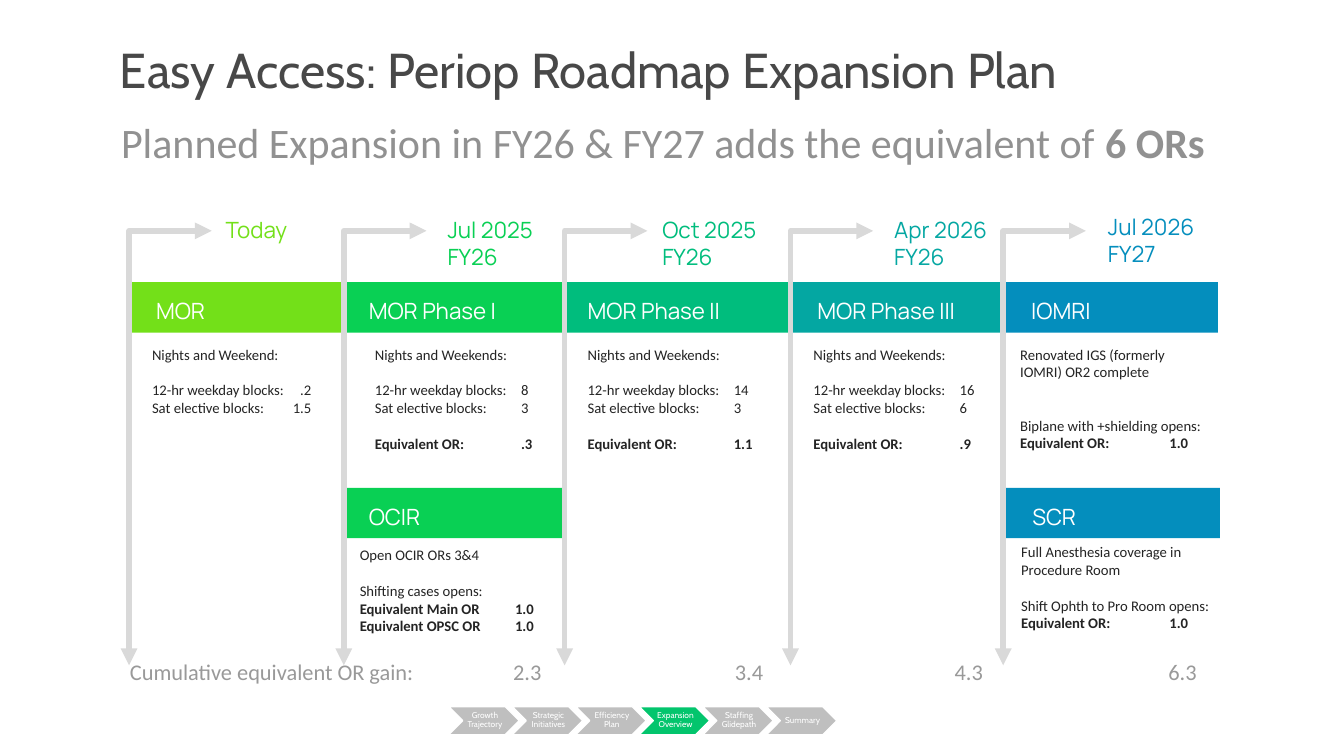
from dataclasses import dataclass

from lxml import etree
from pptx import Presentation
from pptx.dml.color import RGBColor
from pptx.enum.shapes import MSO_SHAPE
from pptx.enum.text import MSO_ANCHOR, MSO_AUTO_SIZE, PP_ALIGN
from pptx.oxml.ns import qn
from pptx.shapes.autoshape import Shape
from pptx.slide import Slide
from pptx.text.text import TextFrame
from pptx.util import Inches, Pt

RECTANGLE, CHEVRON = MSO_SHAPE.RECTANGLE, MSO_SHAPE.CHEVRON
TOP, MIDDLE = MSO_ANCHOR.TOP, MSO_ANCHOR.MIDDLE
LEFT, CENTER = PP_ALIGN.LEFT, PP_ALIGN.CENTER
NO_AUTOFIT = MSO_AUTO_SIZE.NONE


@dataclass(frozen=True)
class Theme:
    title: str = "484848"
    subtitle: str = "919191"
    total: str = "999999"
    detail: str = "242424"
    white: str = "FFFFFF"
    arrow: str = "D9D9D9"
    step: str = "BFBFBF"
    current_step: str = "03C56D"
    lime: str = "73E019"
    green: str = "09D054"
    jade: str = "00BD7D"
    teal: str = "04A7A2"
    blue: str = "048EBD"
    title_font: str = "Cabin"
    heading_font: str = "Manrope"
    body_font: str = "Calibri"
    title_size: float = 35
    subtitle_size: float = 30
    heading_size: float = 16
    detail_size: float = 10.5
    step_size: float = 6


THEME = Theme()
BLANK_LINE = 12.8
BAND_HEIGHT = 0.5
ARROW_TOP, ARROW_BOTTOM, ARROW_REACH = 2.29, 6.6, 0.82


@dataclass(frozen=True)
class Line:
    text: str
    value: str = ""
    bold: bool = False
    gap: float = 0
    bold_tail: str = ""


@dataclass(frozen=True)
class Band:
    name: str
    left: float
    top: float
    width: float
    name_left: float
    color: str


@dataclass(frozen=True)
class Milestone:
    arrow_left: float
    date_left: float
    date_top: float
    date: tuple[str, ...]
    color: str


@dataclass(frozen=True)
class Detail:
    left: float
    top: float
    width: float
    height: float
    tab: float
    lines: tuple[Line, ...]
    tab_align: str = "l"


def blocks(left: float, weekday: str, saturday: str, equivalent: str) -> Detail:
    """Night and weekend blocks gained in one MOR phase."""
    return Detail(left, 3.38, 1.87, 1.34, 1.45, (
        Line("Nights and Weekends:"),
        Line("12-hr weekday blocks:", weekday, gap=BLANK_LINE),
        Line("Sat elective blocks:", saturday),
        Line("Equivalent OR:", equivalent, bold=True, gap=BLANK_LINE),
    ))


BANDS = (
    Band("MOR", 1.28, 2.8, 2.12, 1.45, THEME.lime),
    Band("MOR Phase I", 3.4, 2.8, 2.19, 3.56, THEME.green),
    Band("MOR Phase II", 5.59, 2.8, 2.25, 5.73, THEME.jade),
    Band("MOR Phase III", 7.84, 2.8, 2.12, 8.01, THEME.teal),
    Band("IOMRI", 9.96, 2.8, 2.12, 10.13, THEME.blue),
    Band("OCIR", 3.41, 4.84, 2.19, 3.56, THEME.green),
    Band("SCR", 9.98, 4.84, 2.12, 10.14, THEME.blue),
)
MILESTONES = (
    Milestone(1.28, 2.14, 2.1, ("Today",), THEME.lime),
    Milestone(3.41, 4.34, 2.1, ("Jul 2025", "FY26"), THEME.green),
    Milestone(5.6, 6.47, 2.1, ("Oct 2025", "FY26"), THEME.jade),
    Milestone(7.84, 8.77, 2.1, ("Apr 2026", "FY26"), THEME.teal),
    Milestone(9.95, 10.89, 2.07, ("Jul 2026", "FY27"), THEME.blue),
)
DETAILS = (
    Detail(1.41, 3.38, 1.87, 1.51, 1.58, (
        Line("Nights and Weekend:"),
        Line("12-hr weekday blocks:", ".2", gap=BLANK_LINE),
        Line("Sat elective blocks:", "1.5"),
    ), "r"),
    blocks(3.62, "8", "3", ".3"),
    blocks(5.73, "14", "3", "1.1"),
    blocks(7.97, "16", "6", ".9"),
    Detail(10.02, 3.38, 2.03, 1.16, 1.48, (
        Line("Renovated IGS (formerly IOMRI) OR2 complete"),
        Line("Biplane with +shielding opens:", gap=2 * BLANK_LINE),
        Line("Equivalent OR:", "1.0", bold=True),
    )),
    Detail(3.47, 5.37, 1.96, 1.16, 1.54, (
        Line("Open OCIR ORs 3&4"),
        Line("Shifting cases opens:", gap=BLANK_LINE),
        Line("Equivalent Main OR", "1.0", bold=True),
        Line("Equivalent OPSC OR", "1.0", bold=True),
    )),
    Detail(10.03, 5.34, 2.12, 0.98, 1.47, (
        Line("Full Anesthesia coverage in Procedure Room"),
        Line("Shift Ophth to Pro Room opens:", gap=BLANK_LINE),
        Line("Equivalent OR:", "1.0", bold=True),
    )),
)
TOTALS = ("2.3", "3.4", "4.3", "6.3")
TOTAL_TABS = (3.8, 6.0, 8.18, 10.3)
STEPS = ("Growth Trajectory", "Strategic Initiatives", "Efficiency Plan",
         "Expansion Overview", "Staffing Glidepath", "Summary")
CURRENT_STEP = "Expansion Overview"


def write(frame: TextFrame, lines: tuple[Line, ...], *, size: float, font: str, color: str,
          align: PP_ALIGN = LEFT, anchor: MSO_ANCHOR = TOP, spacing: float = 1.0,
          insets: tuple[float, ...] = (0.1, 0.05, 0.1, 0.05),
          tabs: tuple[float, ...] = (), tab_align: str = "l") -> None:
    frame.word_wrap = True
    frame.auto_size = NO_AUTOFIT
    frame.vertical_anchor = anchor
    (frame.margin_left, frame.margin_top,
     frame.margin_right, frame.margin_bottom) = map(Inches, insets)
    for index, line in enumerate(lines):
        paragraph = frame.add_paragraph() if index else frame.paragraphs[0]
        if tabs:
            stops = etree.SubElement(paragraph._p.get_or_add_pPr(), qn("a:tabLst"))
            for tab in tabs:
                etree.SubElement(stops, qn("a:tab"), pos=str(Inches(tab)), algn=tab_align)
        paragraph.alignment = align
        paragraph.line_spacing = spacing
        paragraph.space_before = Pt(line.gap)
        text = f"{line.text}\t{line.value}" if line.value else line.text
        for part, bold in ((text, line.bold), (line.bold_tail, True)):
            if part:
                run = paragraph.add_run()
                run.text = part
                run.font.size, run.font.name, run.font.bold = Pt(size), font, bold
                run.font.color.rgb = RGBColor.from_string(color)


def add_frame(slide: Slide, left: float, top: float, width: float, height: float) -> TextFrame:
    return slide.shapes.add_textbox(*map(Inches, (left, top, width, height))).text_frame


def add_filled(slide: Slide, kind: MSO_SHAPE, left: float, top: float, width: float,
               height: float, color: str) -> Shape:
    shape = slide.shapes.add_shape(kind, *map(Inches, (left, top, width, height)))
    shape.shadow.inherit = False
    shape.fill.solid()
    shape.fill.fore_color.rgb = RGBColor.from_string(color)
    shape.line.fill.background()
    return shape


def add_arrow(slide: Slide, left: float) -> None:
    """Bent arrow pointing down to the totals and right to the date."""
    builder = slide.shapes.build_freeform(Inches(left), Inches(ARROW_BOTTOM))
    corner_and_end = ((left, ARROW_TOP), (left + ARROW_REACH, ARROW_TOP))
    builder.add_line_segments([(Inches(x), Inches(y)) for x, y in corner_and_end], close=False)
    arrow = builder.convert_to_shape()
    arrow.shadow.inherit = False
    arrow.fill.background()
    arrow.line.width = Pt(4)
    arrow.line.color.rgb = RGBColor.from_string(THEME.arrow)
    for end in ("a:headEnd", "a:tailEnd"):
        etree.SubElement(arrow.line._get_or_add_ln(), qn(end), type="triangle")


def add_steps(slide: Slide) -> None:
    for index, step in enumerate(STEPS):
        color = THEME.current_step if step == CURRENT_STEP else THEME.step
        chevron = add_filled(slide, CHEVRON, 4.45 + 0.63 * index, 7.01, 0.7, 0.28, color)
        chevron.line.color.rgb = RGBColor.from_string(THEME.white)
        chevron.line.width = Pt(1)
        write(chevron.text_frame, (Line(step),), size=THEME.step_size, font=THEME.title_font,
              color=THEME.white, align=CENTER, anchor=MIDDLE, spacing=0.9,
              insets=(0.03, 0.01, 0.01, 0.01))


def add_titles(slide: Slide) -> None:
    title, subtitle = slide.placeholders
    title.left, title.top, title.width, title.height = map(Inches, (1.09, 0.41, 11.23, 1.27))
    write(title.text_frame, (Line("Easy Access: Periop Roadmap Expansion Plan"),),
          size=THEME.title_size, font=THEME.title_font, color=THEME.title, spacing=0.9)
    subtitle.left, subtitle.top, subtitle.width, subtitle.height = map(
        Inches, (0.75, 0.83, 11.65, 1.25))
    planned = Line("Planned Expansion in FY26 & FY27 adds the equivalent of ", bold_tail="6 ORs")
    write(subtitle.text_frame, (planned,), size=THEME.subtitle_size, font=THEME.body_font,
          color=THEME.subtitle, align=CENTER, anchor=MIDDLE, spacing=0.8, insets=(0, 0, 0, 0))


def main() -> None:
    deck = Presentation()
    deck.slide_width, deck.slide_height = Inches(13.33), Inches(7.5)
    slide = deck.slides.add_slide(deck.slide_layouts[0])
    add_titles(slide)
    for band in BANDS:
        add_filled(slide, RECTANGLE, band.left, band.top, band.width, BAND_HEIGHT, band.color)
    for milestone in MILESTONES:
        add_arrow(slide, milestone.arrow_left)
        write(add_frame(slide, milestone.date_left, milestone.date_top, 1.25, 0.64),
              tuple(map(Line, milestone.date)), size=THEME.heading_size,
              font=THEME.heading_font, color=milestone.color)
    for band in BANDS:
        write(add_frame(slide, band.name_left, band.top + 0.1, 1.87, 0.37), (Line(band.name),),
              size=THEME.heading_size, font=THEME.heading_font, color=THEME.white)
    for detail in DETAILS:
        write(add_frame(slide, detail.left, detail.top, detail.width, detail.height),
              detail.lines, size=THEME.detail_size, font=THEME.body_font, color=THEME.detail,
              tabs=(detail.tab,), tab_align=detail.tab_align)
    write(add_frame(slide, 1.19, 6.48, 11.65, 0.37),
          (Line("Cumulative equivalent OR gain:", "\t".join(TOTALS)),),
          size=THEME.heading_size, font=THEME.body_font, color=THEME.total, tabs=TOTAL_TABS)
    add_steps(slide)
    deck.save("out.pptx")


if __name__ == "__main__":
    main()
